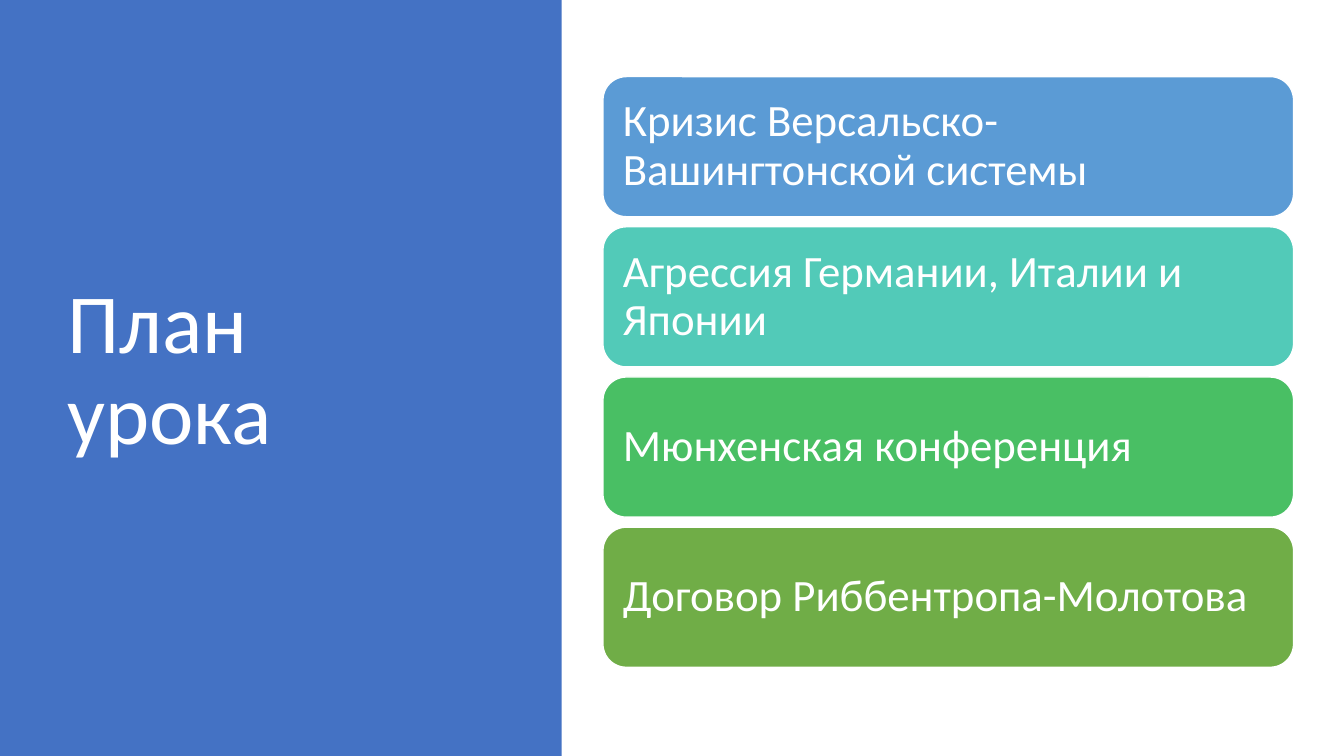
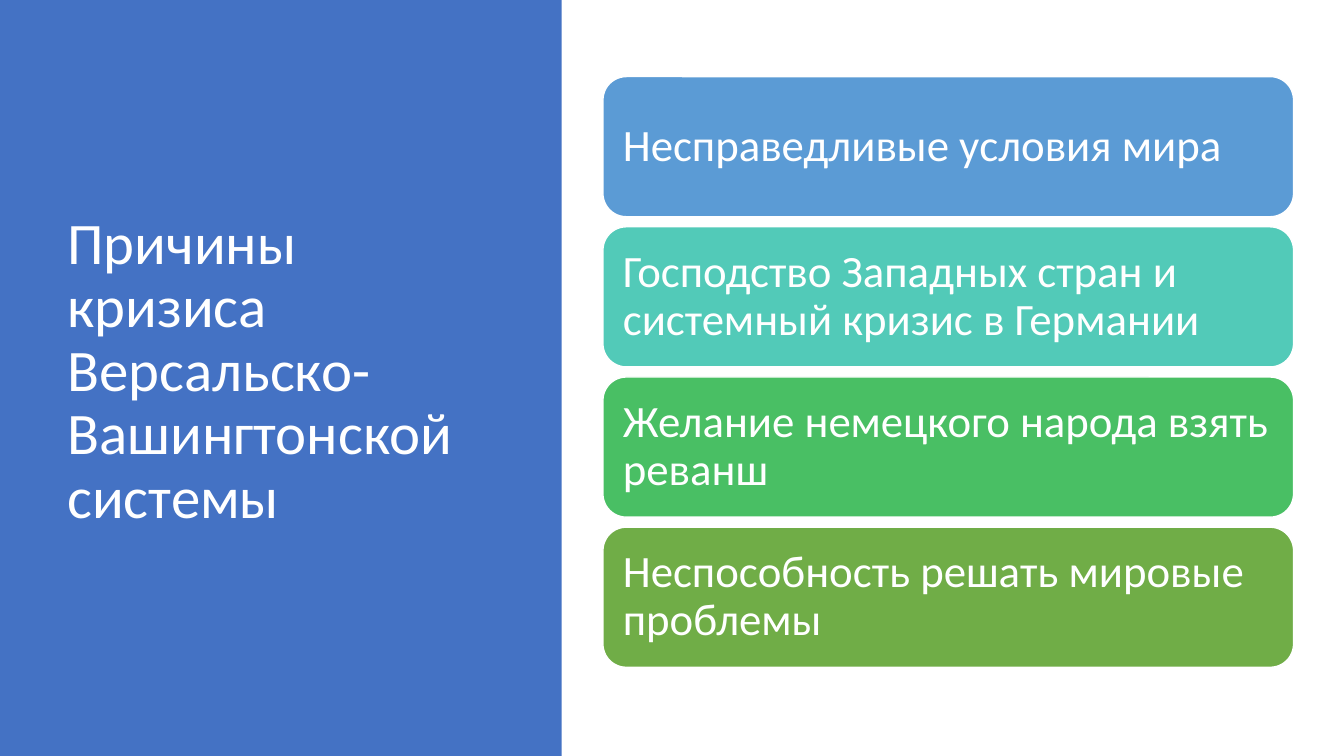
from pptx import Presentation
from pptx.dml.color import RGBColor
from pptx.enum.shapes import MSO_SHAPE
from pptx.enum.text import MSO_ANCHOR, PP_ALIGN
from pptx.util import Inches, Pt

RECTANGLE = MSO_SHAPE.RECTANGLE
ROUNDED = MSO_SHAPE.ROUNDED_RECTANGLE
MIDDLE = MSO_ANCHOR.MIDDLE
LEFT = PP_ALIGN.LEFT

FONT = "Calibri"
WHITE = "FFFFFF"
PANEL_BLUE = "4472C4"
CARD_COLOURS = ["5B9BD5", "52CAB8", "49BF64", "70AD47"]

SLIDE_WIDTH, SLIDE_HEIGHT = 13.33, 7.5
PANEL_WIDTH = 5.57
CARD_LEFT, CARD_TOP = 5.98, 0.76
CARD_WIDTH, CARD_HEIGHT = 6.85, 1.39
CARD_PITCH = 1.49

LESSON_SLIDES = [
    ("План урока", 60, [
        "Кризис Версальско-Вашингтонской системы",
        "Агрессия Германии, Италии и Японии",
        "Мюнхенская конференция",
        "Договор Риббентропа-Молотова",
    ]),
    ("Причины кризиса Версальско-Вашингтонской системы", 42, [
        "Несправедливые условия мира",
        "Господство Западных стран и системный кризис в Германии",
        "Желание немецкого народа взять реванш",
        "Неспособность решать мировые проблемы",
    ]),
]


def colour(hex_value):
    return RGBColor.from_string(hex_value)


def write_text(box, text, *, size, side_inset=0.1, end_inset=0.05):
    frame = box.text_frame
    frame.word_wrap = True
    frame.vertical_anchor = MIDDLE
    frame.margin_left = frame.margin_right = Inches(side_inset)
    frame.margin_top = frame.margin_bottom = Inches(end_inset)
    para = frame.paragraphs[0]
    para.alignment = LEFT
    para.line_spacing = 0.9
    span = para.add_run()
    span.text = text
    span.font.name = FONT
    span.font.size = Pt(size)
    span.font.color.rgb = colour(WHITE)


def add_block(page, preset, left, top, width, height, *, fill, line=None):
    block = page.shapes.add_shape(
        preset, Inches(left), Inches(top), Inches(width), Inches(height))
    block.shadow.inherit = False
    block.fill.solid()
    block.fill.fore_color.rgb = colour(fill)
    if line:
        block.line.color.rgb = colour(line)
        block.line.width = Pt(1)
    else:
        block.line.fill.background()
    return block


def add_title_panel(page, title, size):
    add_block(page, RECTANGLE, 0, 0, PANEL_WIDTH, SLIDE_HEIGHT, fill=PANEL_BLUE)
    box = page.shapes.add_textbox(
        Inches(0.57), Inches(0.68), Inches(4.1), Inches(6.02))
    write_text(box, title, size=size)


def add_cards(page, topics):
    for index, (topic, fill) in enumerate(zip(topics, CARD_COLOURS)):
        top = CARD_TOP + index * CARD_PITCH
        card = add_block(page, ROUNDED, CARD_LEFT, top, CARD_WIDTH, CARD_HEIGHT,
                         fill=fill, line=WHITE)
        write_text(card, topic, size=32, side_inset=0.13, end_inset=0.13)


def main():
    deck = Presentation()
    deck.slide_width = Inches(SLIDE_WIDTH)
    deck.slide_height = Inches(SLIDE_HEIGHT)
    blank = deck.slide_layouts[6]
    for title, title_size, topics in LESSON_SLIDES:
        page = deck.slides.add_slide(blank)
        add_title_panel(page, title, title_size)
        add_cards(page, topics)
    deck.save("out.pptx")


if __name__ == "__main__":
    main()
